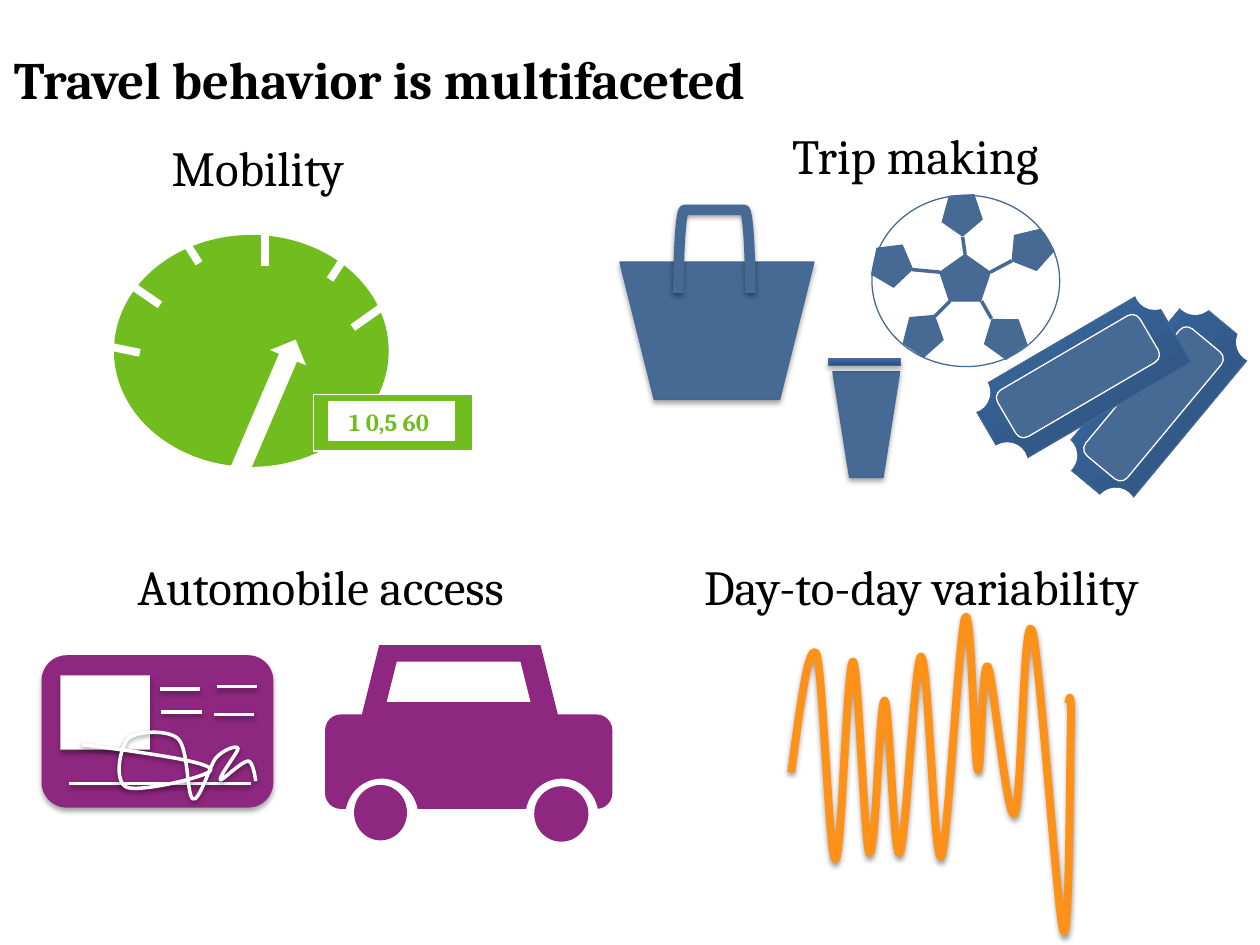
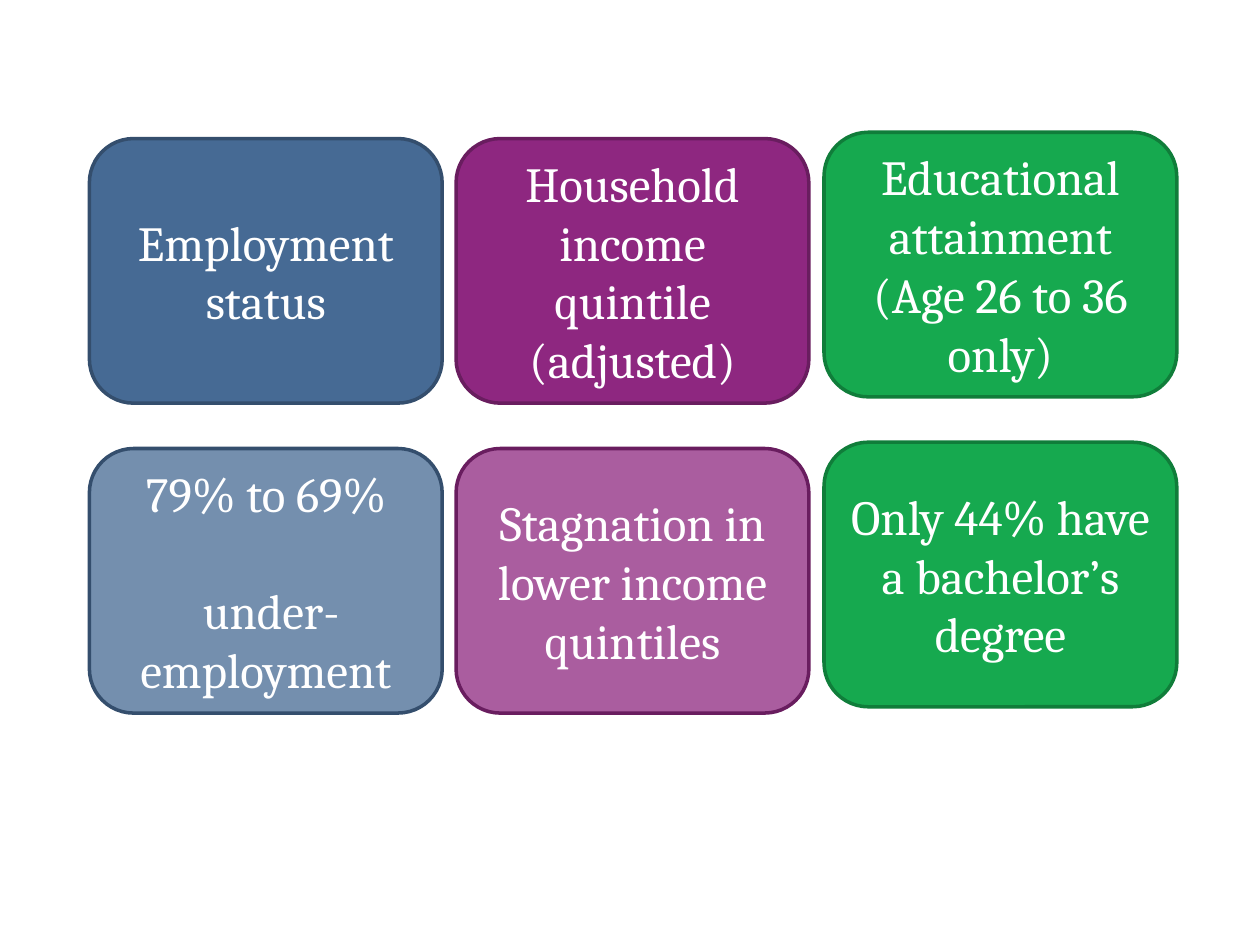
from copy import deepcopy

from lxml import etree
from pptx import Presentation
from pptx.dml.color import RGBColor
from pptx.enum.shapes import MSO_CONNECTOR, MSO_SHAPE
from pptx.enum.text import MSO_ANCHOR, PP_ALIGN
from pptx.oxml.ns import qn
from pptx.util import Inches, Pt

RECT, ROUND, OVAL = MSO_SHAPE.RECTANGLE, MSO_SHAPE.ROUNDED_RECTANGLE, MSO_SHAPE.OVAL
TRAPEZOID, PENTAGON = MSO_SHAPE.TRAPEZOID, MSO_SHAPE.REGULAR_PENTAGON
BRACKET, ARROW = MSO_SHAPE.RIGHT_BRACKET, MSO_SHAPE.RIGHT_ARROW
STRAIGHT = MSO_CONNECTOR.STRAIGHT
LEFT, CENTER = PP_ALIGN.LEFT, PP_ALIGN.CENTER
TOP, MIDDLE = MSO_ANCHOR.TOP, MSO_ANCHOR.MIDDLE

FONT = "Cambria"
COLORS = {
    "black": "000000", "white": "FFFFFF", "blue": "466A94", "blue edge": "436893",
    "blue dark": "2C4E77", "blue middle": "38669B", "blue bright": "37669D",
    "blue border": "344E6D", "purple": "8E2780", "purple border": "691D5F",
    "green": "16A94F", "green border": "107D3A", "lime": "71BD1F", "orange": "FE9118",
}
BLUE_FADE = ((0, "blue dark"), (80, "blue middle"), (100, "blue bright"))
SHAPE_SHADOW = (35, 1.8)
LINE_SHADOW = (38, 1.6)

TITLE = "Travel behavior is multifaceted"
HEADINGS = [
    ("Mobility", (0.25, 1.04, 3.59, 0.57), CENTER),
    ("Trip making", (4.92, 0.95, 4.69, 0.57), CENTER),
    ("Automobile access", (0.17, 4.37, 4.75, 0.57), CENTER),
    ("Day-to-day variability", (5.49, 4.37, 4, 0.57), LEFT),
]
ODOMETER = "1 0,5 60 "

CAR = [
    (ROUND, (2.58, 5.67, 2.28, 0.75), "purple"),
    (TRAPEZOID, (2.87, 5.12, 1.56, 0.56), "purple"),
    (OVAL, (2.74, 6.18, 0.58, 0.6), "white"),
    (OVAL, (4.17, 6.18, 0.58, 0.6), "white"),
    (TRAPEZOID, (3.07, 5.25, 1.14, 0.32), "white"),
    (OVAL, (2.81, 6.23, 0.42, 0.44), "purple"),
    (OVAL, (4.24, 6.24, 0.43, 0.44), "purple"),
]
TICKET_SIZE, STUB_SIZE, NOTCH_SIZE = (1.67, 0.67), (1.31, 0.43), (0.33, 0.33)
TICKETS = [
    (309.7, (8.34, 2.87), (8.5, 2.99),
     [(9.32, 2.17), (9.81, 2.55), (8.22, 3.45), (8.69, 3.87)]),
    (329.7, (7.73, 2.67), (7.9, 2.77), [(9, 2.13), (7.53, 2.95), (7.83, 3.51)]),
]
BALL_PATCHES = [
    ((7.46, 2.02, 0.4, 0.37), 0),
    ((6.92, 1.95, 0.34, 0.31), 101.6),
    ((7.82, 2.51, 0.34, 0.31), 35.6),
    ((7.17, 2.51, 0.34, 0.3), 104.3),
    ((8.02, 1.84, 0.34, 0.31), 166.6),
    ((7.48, 1.55, 0.34, 0.3), 105.5),
]
BALL_SEAMS = [
    (7.66, 2.02, 7.64, 1.88), (7.86, 2.16, 8.03, 2.07), (7.79, 2.39, 7.87, 2.53),
    (7.54, 2.39, 7.42, 2.51), (7.46, 2.16, 7.24, 2.14),
]
LICENSE_LINES = [
    (0.55, 6.22, 1.99, 6.22), (1.27, 5.47, 1.59, 5.47), (1.28, 5.65, 1.6, 5.65),
    (1.72, 5.45, 2.04, 5.45), (1.7, 5.67, 2.02, 5.67),
]
DIAL_TICKS = [
    (0.72, 2.72, 1.11, 2.8), (0.82, 2.11, 1.27, 2.42), (1.39, 1.79, 1.58, 2.09),
    (2.1, 1.81, 2.1, 2.11), (2.82, 1.91, 2.62, 2.22), (3.07, 2.41, 2.8, 2.6),
]
SIGNATURE = [
    (0.65, 5.91),
    (1.13, 5.97), (1.62, 6.04), (1.67, 6.1), (1.73, 6.15), (1.12, 6.29), (1.01, 6.25),
    (0.9, 6.21), (0.95, 5.93), (1.02, 5.86), (1.09, 5.8), (1.33, 5.79), (1.41, 5.86),
    (1.5, 5.94), (1.48, 6.31), (1.53, 6.34), (1.58, 6.37), (1.66, 6.09), (1.71, 6.02),
    (1.77, 5.95), (1.88, 5.91), (1.89, 5.94), (1.89, 5.97), (1.73, 6.17), (1.75, 6.19),
    (1.76, 6.2), (1.92, 6.04), (1.97, 6.04), (2.01, 6.04), (2.03, 6.2), (2.03, 6.2),
]
DAILY_WAVE = [
    (6.28, 6.13),
    (6.35, 5.6), (6.42, 5.08), (6.48, 5.19), (6.53, 5.31), (6.58, 6.81), (6.63, 6.82),
    (6.68, 6.83), (6.72, 5.26), (6.77, 5.25), (6.81, 5.24), (6.86, 6.71), (6.9, 6.77),
    (6.95, 6.82), (6.98, 5.56), (7.02, 5.56), (7.06, 5.56), (7.09, 6.82), (7.14, 6.77),
    (7.19, 6.71), (7.26, 5.21), (7.31, 5.21), (7.37, 5.22), (7.41, 6.86), (7.47, 6.8),
    (7.52, 6.75), (7.61, 5.02), (7.66, 4.9), (7.71, 4.79), (7.73, 6.04), (7.76, 6.11),
    (7.79, 6.17), (7.79, 5.23), (7.84, 5.29), (7.88, 5.35), (7.99, 6.5), (8.05, 6.46),
    (8.11, 6.41), (8.12, 4.84), (8.19, 5), (8.25, 5.15), (8.39, 7.27), (8.44, 7.39),
    (8.49, 7.51), (8.49, 6.02), (8.5, 5.72), (8.5, 5.42), (8.48, 5.58), (8.48, 5.58),
]

CARD_SIZE, CARD_PITCH = (2.8, 2.1), 2.46
CARD_COLUMNS = [
    ("blue", 75, (0.71, 1.1),
     [["Employment status"], ["79% to 69%", " under-", "employment"]]),
    ("purple", 75, (3.62, 1.1),
     [["Household income quintile", "(adjusted)"],
      ["Stagnation in lower income quintiles"]]),
    ("green", 100, (6.54, 1.05),
     [["Educational attainment", "(Age 26 to 36 only)"],
      ["Only 44% have a bachelor’s degree"]]),
]
GAP_BEFORE = {" under-": 33.5}


def rgb(name):
    return RGBColor.from_string(COLORS[name])


def write(shape, lines, size=28, color="black", bold=False, align=CENTER, anchor=TOP,
          wrap=True):
    frame = shape.text_frame
    frame.word_wrap = wrap
    frame.vertical_anchor = anchor
    for index, line in enumerate(lines):
        paragraph = frame.paragraphs[0] if index == 0 else frame.add_paragraph()
        paragraph.alignment = align
        paragraph.space_before = Pt(GAP_BEFORE.get(line, 0))
        run = paragraph.add_run()
        run.text = line
        run.font.name, run.font.size, run.font.bold = FONT, Pt(size), bold
        run.font.color.rgb = rgb(color)


def set_shadow(part, shadow):
    effects = part._element.spPr.find(qn("a:effectLst"))
    if effects is None:
        effects = etree.SubElement(part._element.spPr, qn("a:effectLst"))
    if shadow:
        opacity, distance = shadow
        outer = etree.SubElement(effects, qn("a:outerShdw"), blurRad=str(Pt(3.1)),
                                 dist=str(Pt(distance)), dir="5400000", rotWithShape="0")
        tint = etree.SubElement(outer, qn("a:srgbClr"), val=COLORS["black"])
        etree.SubElement(tint, qn("a:alpha"), val=str(opacity * 1000))


def fade(shape, stops):
    shape.fill.gradient()
    shape.fill.gradient_angle = 90
    stop_list = shape._element.spPr.find(qn("a:gradFill")).find(qn("a:gsLst"))
    stop_list.insert(1, deepcopy(stop_list[0]))
    for node, stop, (place, name) in zip(stop_list, shape.fill.gradient_stops, stops):
        node.set("pos", str(place * 1000))
        stop.color.rgb = rgb(name)


def paint(shape, fill=None, line=None, width=0.75, opacity=100, shadow=None):
    if fill is None:
        shape.fill.background()
    elif isinstance(fill, tuple):
        fade(shape, fill)
    else:
        shape.fill.solid()
        shape.fill.fore_color.rgb = rgb(fill)
        if opacity < 100:
            tint = shape._element.spPr.find(qn("a:solidFill"))[0]
            etree.SubElement(tint, qn("a:alpha"), val=str(opacity * 1000))
    if line:
        shape.line.color.rgb = rgb(line)
        shape.line.width = Pt(width)
    else:
        shape.line.fill.background()
    shape.shadow.inherit = False
    set_shadow(shape, shadow)
    return shape


def draw(canvas, kind, box, fill=None, rotation=0, **look):
    shape = canvas.add_shape(kind, *map(Inches, box))
    shape.rotation = rotation
    return paint(shape, fill, **look)


def strokes(canvas, segments, color, width, shadow=None):
    for ends in segments:
        stroke = canvas.add_connector(STRAIGHT, *map(Inches, ends))
        stroke.line.color.rgb = rgb(color)
        stroke.line.width = Pt(width)
        set_shadow(stroke, shadow)


def curve(canvas, points, color, width):
    spots = [(Inches(x), Inches(y)) for x, y in points]
    builder = canvas.build_freeform(*spots[0])
    builder.add_line_segments(spots[3::3], close=False)
    shape = builder.convert_to_shape()
    left, top = min(x for x, _ in spots[::3]), min(y for _, y in spots[::3])
    for index, bend in enumerate(list(shape._element.iter(qn("a:lnTo")))):
        bend.tag = qn("a:cubicBezTo")
        controls = spots[3 * index + 1:3 * index + 3]
        for place, (x, y) in enumerate(controls):
            bend.insert(place, etree.Element(qn("a:pt"), x=str(x - left), y=str(y - top)))
    paint(shape, line=color, width=width, shadow=LINE_SHADOW)


def draw_car(canvas):
    for kind, box, fill in CAR:
        draw(canvas, kind, box, fill)


def draw_bag(canvas):
    draw(canvas, TRAPEZOID, (4.92, 2.08, 1.54, 1.09), "blue", 180,
         line="blue edge", shadow=SHAPE_SHADOW)
    draw(canvas, BRACKET, (5.34, 1.71, 0.66, 0.57), None, 270,
         line="blue", width=6, shadow=LINE_SHADOW)


def draw_cup(canvas):
    draw(canvas, TRAPEZOID, (6.61, 2.95, 0.53, 0.84), "blue", 180,
         line="blue edge", shadow=SHAPE_SHADOW)
    draw(canvas, RECT, (6.58, 2.85, 0.57, 0.05), BLUE_FADE,
         line="blue edge", shadow=SHAPE_SHADOW)


def draw_tickets(canvas):
    for angle, ticket, stub, notches in TICKETS:
        draw(canvas, RECT, ticket + TICKET_SIZE, BLUE_FADE, angle, line="blue edge")
        draw(canvas, ROUND, stub + STUB_SIZE, "blue", angle, line="white")
        for notch in notches:
            draw(canvas, OVAL, notch + NOTCH_SIZE, "white", angle)


def draw_ball(canvas):
    draw(canvas, OVAL, (6.92, 1.55, 1.49, 1.36), "white", line="blue")
    for box, angle in BALL_PATCHES:
        draw(canvas, PENTAGON, box, "blue", angle, line="blue")
    strokes(canvas, BALL_SEAMS, "blue", 2)


def draw_license(canvas):
    draw(canvas, ROUND, (0.33, 5.2, 1.84, 1.21), "purple", shadow=SHAPE_SHADOW)
    draw(canvas, RECT, (0.48, 5.36, 0.71, 0.59), "white", shadow=SHAPE_SHADOW)
    strokes(canvas, LICENSE_LINES, "white", 2, LINE_SHADOW)
    curve(canvas, SIGNATURE, "white", 2)


def draw_speedometer(canvas):
    draw(canvas, OVAL, (0.91, 1.87, 2.17, 1.83), "lime", line="lime")
    draw(canvas, ARROW, (1.56, 3.06, 1.13, 0.31), "white", 293.2)
    strokes(canvas, DIAL_TICKS, "white", 4.5)
    draw(canvas, RECT, (2.49, 3.13, 1.26, 0.45), "lime", line="white")
    readout = draw(canvas, RECT, (2.6, 3.18, 1.02, 0.33), "white", line="lime")
    write(readout, [ODOMETER], size=14, color="lime", bold=True, anchor=MIDDLE)


def build_behavior(deck):
    slide = deck.slides.add_slide(deck.slide_layouts[5])
    title = slide.shapes.title
    title.left, title.top, title.width, title.height = map(Inches, (0.01, 0, 9, 1.25))
    write(title, [TITLE], size=30, bold=True, align=LEFT, anchor=MIDDLE)
    for icon in (draw_car, draw_bag, draw_cup, draw_tickets, draw_ball,
                 draw_license, draw_speedometer):
        icon(slide.shapes.add_group_shape().shapes)
    curve(slide.shapes, DAILY_WAVE, "orange", 4.5)
    for heading, box, align in HEADINGS:
        write(slide.shapes.add_textbox(*map(Inches, box)), [heading], align=align,
              wrap=align == CENTER)


def build_cards(deck):
    slide = deck.slides.add_slide(deck.slide_layouts[6])
    for color, opacity, (left, top), cards in CARD_COLUMNS:
        for row, lines in enumerate(cards):
            box = (left, top + row * CARD_PITCH, *CARD_SIZE)
            card = draw(slide.shapes, ROUND, box, color, line=color + " border", width=2,
                        opacity=opacity if row else 100)
            write(card, lines, color="white", anchor=MIDDLE)


def main():
    deck = Presentation()
    deck.slide_width, deck.slide_height = Inches(10), Inches(7.5)
    build_behavior(deck)
    build_cards(deck)
    deck.save("out.pptx")


if __name__ == "__main__":
    main()
